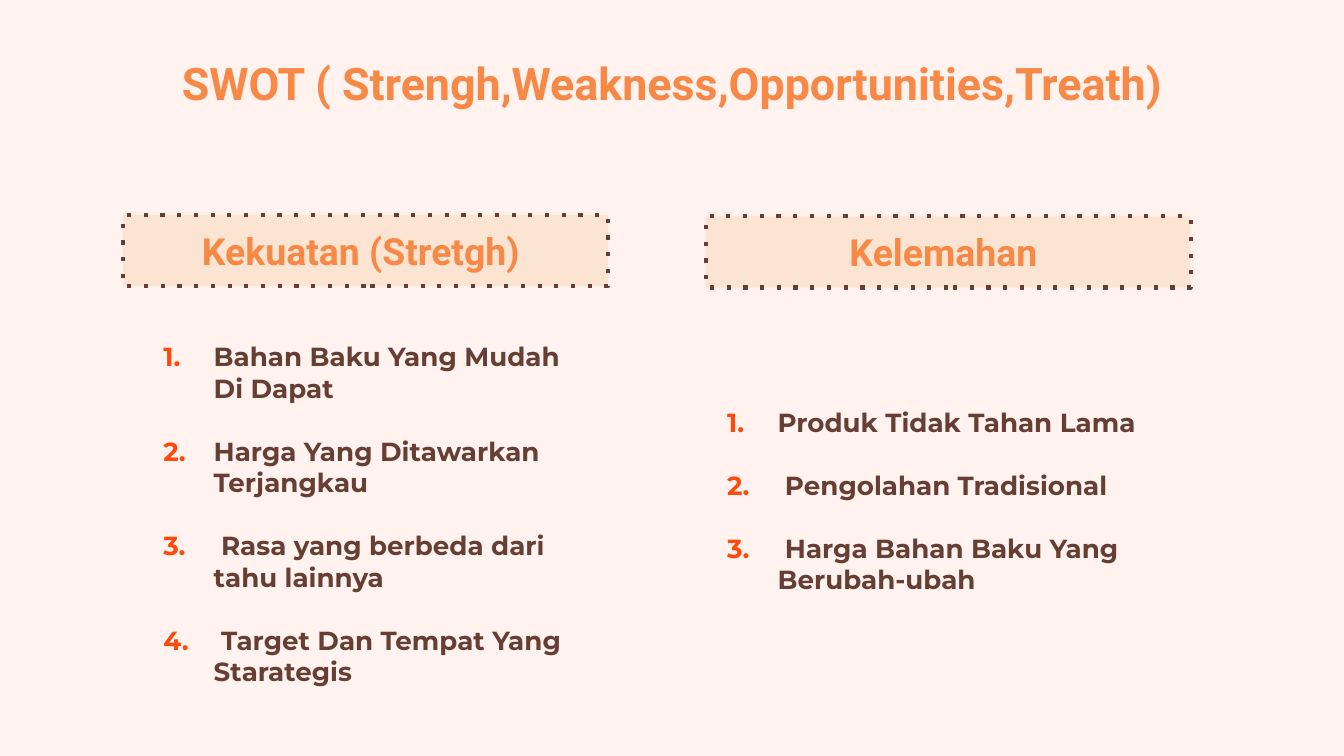
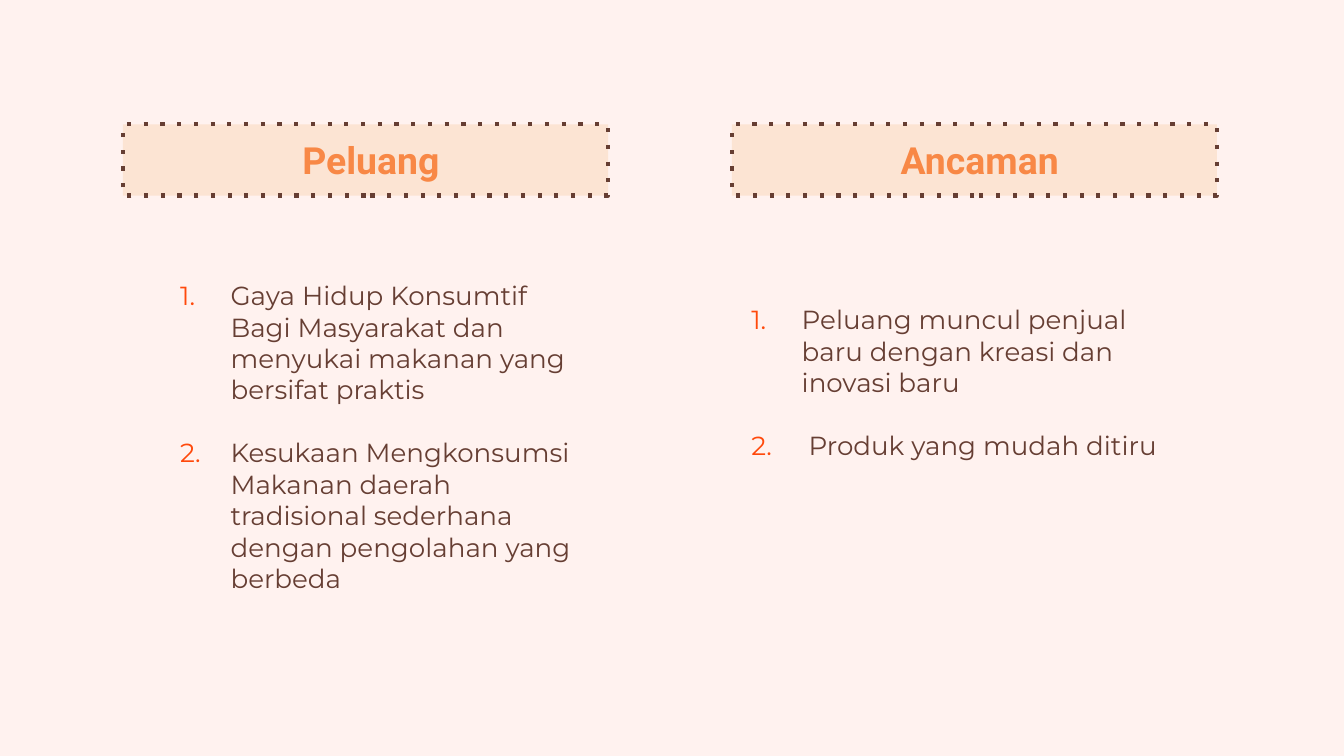
from pptx import Presentation
from pptx.dml.color import RGBColor
from pptx.enum.text import MSO_ANCHOR, MSO_AUTO_SIZE, PP_ALIGN
from pptx.oxml.ns import qn
from pptx.util import Pt
from lxml.etree import SubElement

EMU_PER_PX = 4572
SLIDE_WIDTH, SLIDE_HEIGHT = 2000, 1125
INSET = 20
HEADING_SIZE = (722, 106)
HEADING_LEFT = 183
NUMBER_HANG = 75

BACKGROUND = RGBColor(0xFF, 0xF2, 0xEF)
ORANGE = RGBColor(0xF8, 0x88, 0x46)
PEACH = RGBColor(0xFC, 0xE4, 0xD3)
BROWN = RGBColor(0x66, 0x3E, 0x33)
NUMBER_RED = RGBColor(0xFF, 0x49, 0x0B)

TITLE_FONT = "Roboto"
BODY_FONT = "Montserrat"


def px(length):
    return length * EMU_PER_PX


def place(shape, left, top, width, height, anchor=MSO_ANCHOR.TOP):
    shape.left, shape.top = px(left), px(top)
    shape.width, shape.height = px(width), px(height)
    frame = shape.text_frame
    frame.auto_size = MSO_AUTO_SIZE.NONE
    frame.word_wrap = True
    frame.vertical_anchor = anchor
    frame.margin_left = frame.margin_right = px(INSET)
    frame.margin_top = frame.margin_bottom = px(INSET)
    return frame


def set_font(paragraph, name, size, color, bold):
    font = paragraph.font
    font.name = name
    font.size = Pt(size)
    font.color.rgb = color
    font.bold = bold


def set_indent(paragraph, left, hang):
    properties = paragraph._p.get_or_add_pPr()
    properties.set("marL", str(px(left)))
    properties.set("indent", str(px(-hang)))
    return properties


def write_centered(frame, text, size):
    frame.text = text
    paragraph = frame.paragraphs[0]
    paragraph.alignment = PP_ALIGN.CENTER
    paragraph.space_before = Pt(0)
    set_font(paragraph, TITLE_FONT, size, ORANGE, True)
    return paragraph


def add_title(slide, text):
    frame = place(slide.shapes.title, 157, 63, 1686, 100)
    write_centered(frame, text, 24)


def add_heading(shape, text, left, top, indent=0, hang=0):
    frame = place(shape, left, top, *HEADING_SIZE, anchor=MSO_ANCHOR.BOTTOM)
    shape.fill.solid()
    shape.fill.fore_color.rgb = PEACH
    shape.line.color.rgb = BROWN
    shape.line.width = Pt(2.25)
    outline = shape.element.spPr.find(qn("a:ln"))
    SubElement(outline, qn("a:prstDash"), val="dot")
    paragraph = write_centered(frame, text, 20)
    set_indent(paragraph, indent, hang)


def add_numbered_list(shape, items, box, indent, bold):
    frame = place(shape, *box)
    for index, item in enumerate(items):
        paragraph = frame.add_paragraph() if index else frame.paragraphs[0]
        paragraph.text = item
        properties = set_indent(paragraph, indent, NUMBER_HANG)
        number_color = SubElement(properties, qn("a:buClr"))
        SubElement(number_color, qn("a:srgbClr"), val=str(NUMBER_RED))
        SubElement(properties, qn("a:buAutoNum"), type="arabicPeriod")
        paragraph.alignment = PP_ALIGN.LEFT
        paragraph.space_before = Pt(17 if index else 0)
        set_font(paragraph, BODY_FONT, 14, BROWN, bold)


def add_comparison_slide(presentation):
    slide = presentation.slides.add_slide(presentation.slide_layouts.get_by_name("Comparison"))
    title, left_heading, left_list, right_heading, right_list = slide.placeholders
    return slide, (left_heading, right_heading), (left_list, right_list)


def build_strengths_and_weaknesses(presentation):
    slide, headings, lists = add_comparison_slide(presentation)
    add_title(slide, "SWOT ( Strengh,Weakness,Opportunities,Treath)")
    add_heading(headings[0], "Kekuatan (Stretgh) ", HEADING_LEFT, 320)
    add_heading(headings[1], "Kelemahan ", 1050, 322)
    strengths = [
        "Bahan Baku Yang Mudah Di Dapat",
        "Harga Yang Ditawarkan Terjangkau",
        " Rasa yang berbeda dari tahu lainnya",
        " Target Dan Tempat Yang Starategis",
    ]
    weaknesses = [
        "Produk Tidak Tahan Lama",
        " Pengolahan Tradisional",
        " Harga Bahan Baku Yang Berubah-ubah",
    ]
    add_numbered_list(lists[0], strengths, (223, 487, 672, 528), 75, True)
    add_numbered_list(lists[1], weaknesses, (1062, 584, 722, 334), 75, True)


def build_opportunities_and_threats(presentation):
    slide, headings, lists = add_comparison_slide(presentation)
    title = slide.shapes.title.element
    title.getparent().remove(title)
    add_heading(headings[0], "Peluang ", HEADING_LEFT, 185, 100, 70)
    add_heading(headings[1], "Ancaman ", 1089, 185, 100, 70)
    opportunities = [
        "Gaya Hidup Konsumtif Bagi Masyarakat dan menyukai makanan yang bersifat praktis",
        "Kesukaan Mengkonsumsi Makanan daerah tradisional sederhana dengan pengolahan yang berbeda",
    ]
    threats = [
        "Peluang muncul penjual baru dengan kreasi dan inovasi baru",
        " Produk yang mudah ditiru",
    ]
    add_numbered_list(lists[0], opportunities, (218, 396, 684, 402), 105, False)
    add_numbered_list(lists[1], threats, (1068, 432, 722, 260), 105, False)


def main():
    presentation = Presentation()
    presentation.slide_width = px(SLIDE_WIDTH)
    presentation.slide_height = px(SLIDE_HEIGHT)
    background = presentation.slide_master.background.fill
    background.solid()
    background.fore_color.rgb = BACKGROUND
    build_strengths_and_weaknesses(presentation)
    build_opportunities_and_threats(presentation)
    presentation.save("out.pptx")


if __name__ == "__main__":
    main()
